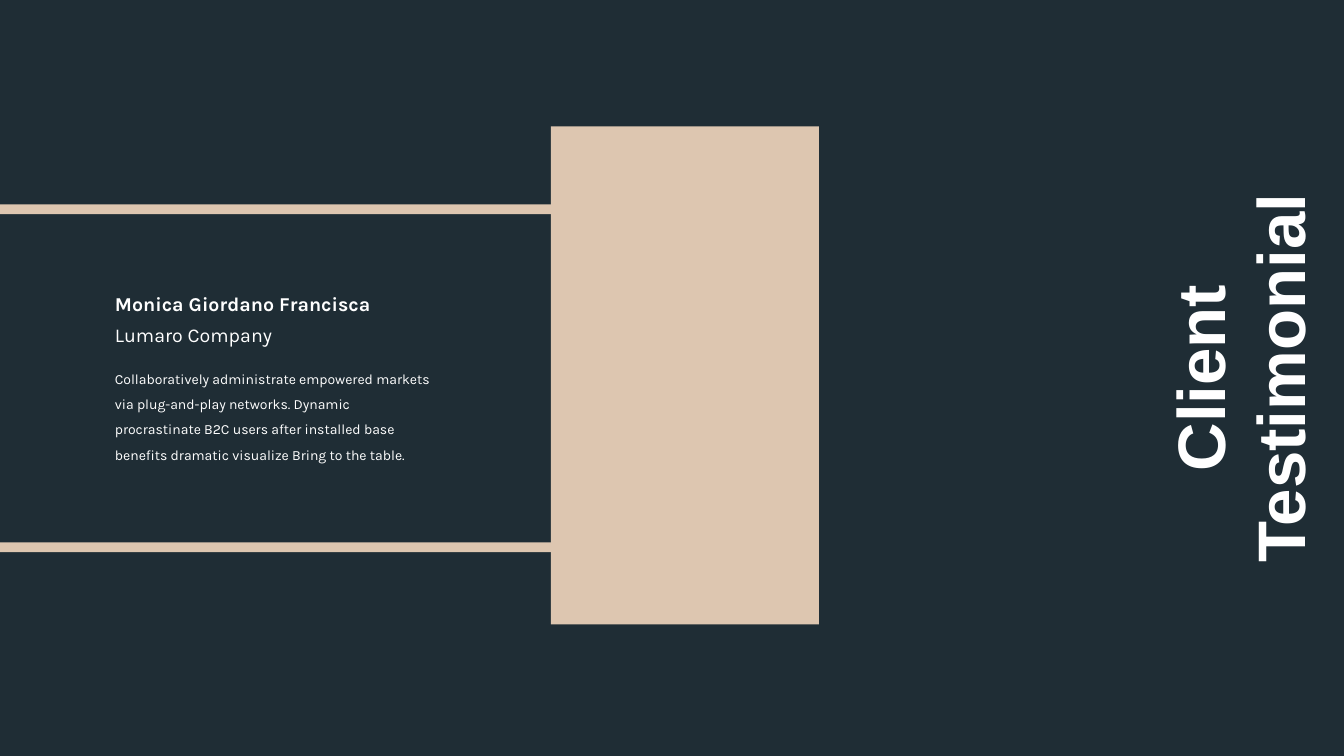
import pptx
import pptx.util
import pptx.dml.color
import pptx.enum.shapes
import pptx.enum.text

Pt = pptx.util.Pt
RGBColor = pptx.dml.color.RGBColor
MSO_SHAPE = pptx.enum.shapes.MSO_SHAPE
PP_ALIGN = pptx.enum.text.PP_ALIGN
MSO_ANCHOR = pptx.enum.text.MSO_ANCHOR

NAVY = RGBColor(0x1F, 0x2D, 0x35)
SAND = RGBColor(0xDD, 0xC6, 0xB0)
WHITE = RGBColor(0xFF, 0xFF, 0xFF)

TEXT_LEFT = 82.1
TEXT_WIDTH = 229.7


def add_sand_shape(slide, kind, left, top, width, height):
    shape = slide.shapes.add_shape(kind, Pt(left), Pt(top), Pt(width), Pt(height))
    shape.shadow.inherit = False
    shape.fill.solid()
    shape.fill.fore_color.rgb = SAND
    shape.line.fill.background()
    return shape


def add_text(slide, text, left, top, width, height, size, font="Karla", bold=False):
    box = slide.shapes.add_textbox(Pt(left), Pt(top), Pt(width), Pt(height))
    frame = box.text_frame
    frame.word_wrap = True
    frame.margin_left = frame.margin_top = frame.margin_right = frame.margin_bottom = 0
    frame.text = text
    run_font = frame.paragraphs[0].runs[0].font
    run_font.name = font
    run_font.size = Pt(size)
    run_font.bold = bold
    run_font.color.rgb = WHITE
    return box


def add_client(slide, name, company, quote):
    add_text(slide, name, TEXT_LEFT, 208.8, TEXT_WIDTH, 17.3, 14, bold=True)
    add_text(slide, company, TEXT_LEFT, 230.6, TEXT_WIDTH, 17.3, 14)
    quote_box = add_text(slide, quote, TEXT_LEFT, 258.5, TEXT_WIDTH, 72.7, 10)
    quote_box.text_frame.paragraphs[0].line_spacing = 1.5


def add_vertical_title(slide, text):
    title = add_text(slide, text, 725, 211.7, 319.7, 116.6, 48, "Arial", True)
    title.rotation = 270
    title.text_frame.vertical_anchor = MSO_ANCHOR.MIDDLE
    title.text_frame.paragraphs[0].alignment = PP_ALIGN.CENTER


def main():
    presentation = pptx.Presentation()
    presentation.slide_width = Pt(960)
    presentation.slide_height = Pt(540)
    slide = presentation.slides.add_slide(presentation.slide_layouts[6])
    slide.background.fill.solid()
    slide.background.fill.fore_color.rgb = NAVY

    border = add_sand_shape(slide, MSO_SHAPE.FRAME, -37.4, 146, 554.4, 248.4)
    border.adjustments[0] = 0.028
    add_sand_shape(slide, MSO_SHAPE.RECTANGLE, 393.6, 90.2, 191.4, 355.9)
    add_client(
        slide,
        "Monica Giordano Francisca",
        "Lumaro Company",
        "Collaboratively administrate empowered markets via plug-and-play networks. "
        "Dynamic procrastinate B2C users after installed base benefits dramatic "
        "visualize Bring to the table.",
    )
    add_vertical_title(slide, "Client Testimonial")
    presentation.save("out.pptx")


if __name__ == "__main__":
    main()
